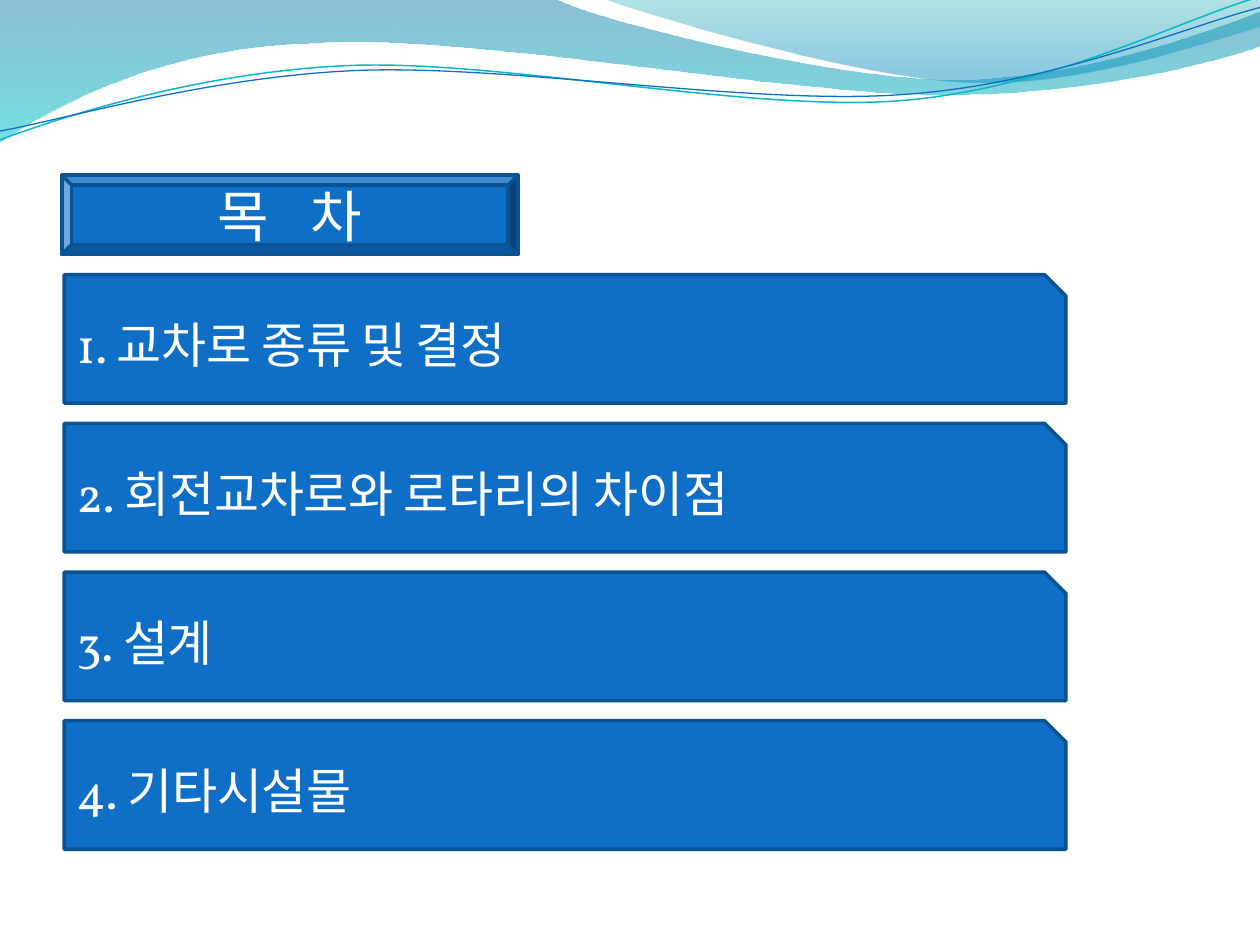
from math import cos, radians, sin

from lxml.etree import SubElement
from pptx import Presentation
from pptx.dml.color import RGBColor
from pptx.enum.shapes import MSO_SHAPE
from pptx.enum.text import MSO_ANCHOR, PP_ALIGN
from pptx.oxml.ns import qn
from pptx.util import Inches, Pt

BLUE = RGBColor(0x0F, 0x6F, 0xC6)
DARK_BLUE = RGBColor(0x0B, 0x52, 0x92)
TEAL = RGBColor(0x0A, 0xB8, 0xBF)
WHITE = RGBColor(0xFF, 0xFF, 0xFF)
DEEP_SEA = RGBColor(0x00, 0x74, 0xA1)
AQUA = RGBColor(0x00, 0xC6, 0xCF)
SEA_GREEN = RGBColor(0x00, 0xA1, 0xA9)
SKY = RGBColor(0x00, 0x8B, 0xBF)
FONT = "Vollkorn"
CURVE_TILT = -2.7

LARGE_WAVE = [
    (0, 0), (4.4, -0.01),
    (4.76, 0.17, 6.64, 0.63, 7.58, 0.63), (8.53, 0.63, 9.58, 0.26, 10, 0.09),
    (10.01, 0.36),
    (9.83, 0.44, 8.7, 0.76, 7.46, 0.75), (6.22, 0.75, 3.82, 0.28, 2.57, 0.34),
    (1.29, 0.36, 0.46, 0.83, -0.01, 1.13),
]
SMALL_WAVE = [
    (4.79, -0.01),
    (5.09, 0.11, 6.82, 0.62, 7.69, 0.65), (8.56, 0.69, 9.61, 0.32, 10, 0.21),
    (10, 0),
]
TEAL_CURVE = [
    (0, 1.11),
    (0.48, 0.93, 1.58, 0.57, 2.77, 0.52), (3.95, 0.47, 5.93, 0.89, 7.13, 0.8),
    (8.33, 0.71, 9.38, 0.15, 9.98, -0.02),
]
BLUE_CURVE = [
    (0, 1.04),
    (0.47, 0.96, 1.64, 0.61, 2.83, 0.56), (4.03, 0.51, 5.97, 0.84, 7.17, 0.75),
    (8.36, 0.67, 9.41, 0.21, 10, 0.06),
]
TOPICS = ["교차로 종류 및 결정", "회전교차로와 로타리의 차이점", "설계", "기타시설물"]


def rotate_segments(segments, center, degrees):
    """Turn every point of the segments clockwise about a center."""
    center_x, center_y = center
    cosine, sine = cos(radians(degrees)), sin(radians(degrees))
    turned = []
    for segment in segments:
        values = []
        for x, y in zip(segment[::2], segment[1::2]):
            dx, dy = x - center_x, y - center_y
            values += [center_x + dx * cosine - dy * sine,
                       center_y + dx * sine + dy * cosine]
        turned.append(tuple(values))
    return turned


def add_outline(slide, segments, left, top, close):
    """Add a shadowless freeform of straight and cubic segments."""
    points = [(Inches(x), Inches(y)) for segment in segments
              for x, y in zip(segment[::2], segment[1::2])]
    builder = slide.shapes.build_freeform(*points[0])
    builder.add_line_segments(points[1:], close=close)
    shape = builder.convert_to_shape(left, top)
    shape.shadow.inherit = False
    lines = iter(list(shape._element.iter(qn("a:lnTo"))))
    for segment in segments[1:]:
        line = next(lines)
        if len(segment) == 6:
            line.tag = qn("a:cubicBezTo")
            for _ in range(2):
                extra = next(lines)
                line.append(extra[0])
                extra.getparent().remove(extra)
    return shape


def add_wave(slide, segments, left, top, stops):
    """Add a wave filled from top to bottom with a translucent gradient."""
    shape = add_outline(slide, segments, left, top, True)
    shape.line.fill.background()
    shape.fill.gradient()
    shape.fill.gradient_angle = 270
    for stop, (position, color, _) in zip(shape.fill.gradient_stops, stops):
        stop.position = position
        stop.color.rgb = color
    for color_element, (_, _, opacity) in zip(shape._element.iter(qn("a:srgbClr")), stops):
        SubElement(color_element, qn("a:alpha"), val=str(opacity * 1000))


def add_curve(slide, segments, left, top, center, color, width):
    """Add an open curved line, tilted about its center."""
    level_segments = rotate_segments(segments, center, -CURVE_TILT)
    shape = add_outline(slide, level_segments, left, top, False)
    shape.rotation = CURVE_TILT
    shape.fill.background()
    shape.line.color.rgb = color
    shape.line.width = Pt(width)


def add_header(slide, left, top):
    """Draw the waves and curves along the top edge."""
    add_wave(slide, LARGE_WAVE, left, top, [(0, DEEP_SEA, 45), (1, AQUA, 55)])
    add_wave(slide, SMALL_WAVE, left, top, [(0, SEA_GREEN, 30), (0.8, SKY, 45)])
    add_curve(slide, TEAL_CURVE, left, top, (4.99, 0.58), TEAL, 0.85)
    add_curve(slide, BLUE_CURVE, left, top, (5, 0.59), BLUE, 0.75)


def add_panel(slide, kind, left, top, width, height, size, alignment):
    """Add a blue panel and return its formatted paragraph."""
    shape = slide.shapes.add_shape(kind, left, top, width, height)
    shape.shadow.inherit = False
    shape.fill.solid()
    shape.fill.fore_color.rgb = BLUE
    shape.line.color.rgb = DARK_BLUE
    shape.line.width = Pt(2)
    shape.text_frame.word_wrap = True
    shape.text_frame.vertical_anchor = MSO_ANCHOR.MIDDLE
    paragraph = shape.text_frame.paragraphs[0]
    paragraph.alignment = alignment
    paragraph.font.name = FONT
    paragraph.font.size = Pt(size)
    paragraph.font.color.rgb = WHITE
    default_properties = paragraph._p.pPr.find(qn("a:defRPr"))
    SubElement(default_properties, qn("a:ea"), typeface=FONT)
    return paragraph


def add_title(slide, left, top, width, height):
    """Add the bevelled title with widely spaced syllables."""
    paragraph = add_panel(slide, MSO_SHAPE.BEVEL, left, top, width, height,
                          32, PP_ALIGN.CENTER)
    first, second = paragraph.add_run(), paragraph.add_run()
    first.text, second.text = "목 ", "차"
    first._r.get_or_add_rPr().set("spc", "860")


def add_topics(slide, left, top, width, height, gap):
    """Stack the numbered topics at equal gaps inside the given box."""
    row_height = (height - gap * (len(TOPICS) - 1)) // len(TOPICS)
    for index, topic in enumerate(TOPICS):
        paragraph = add_panel(slide, MSO_SHAPE.SNIP_1_RECTANGLE, left,
                              top + index * (row_height + gap), width, row_height,
                              28, PP_ALIGN.JUSTIFY)
        paragraph.add_run().text = f"{index + 1}. {topic}"


def main():
    """Build and save the contents slide."""
    presentation = Presentation()
    presentation.slide_width = Inches(10)
    presentation.slide_height = Inches(7.5)
    slide = presentation.slides.add_slide(presentation.slide_layouts[6])
    add_header(slide, Inches(0), Inches(0))
    add_title(slide, Inches(0.49), Inches(1.39), Inches(3.62), Inches(0.63))
    add_topics(slide, Inches(0.51), Inches(2.18), Inches(7.95), Inches(4.56), Inches(0.16))
    presentation.save("out.pptx")


if __name__ == "__main__":
    main()
